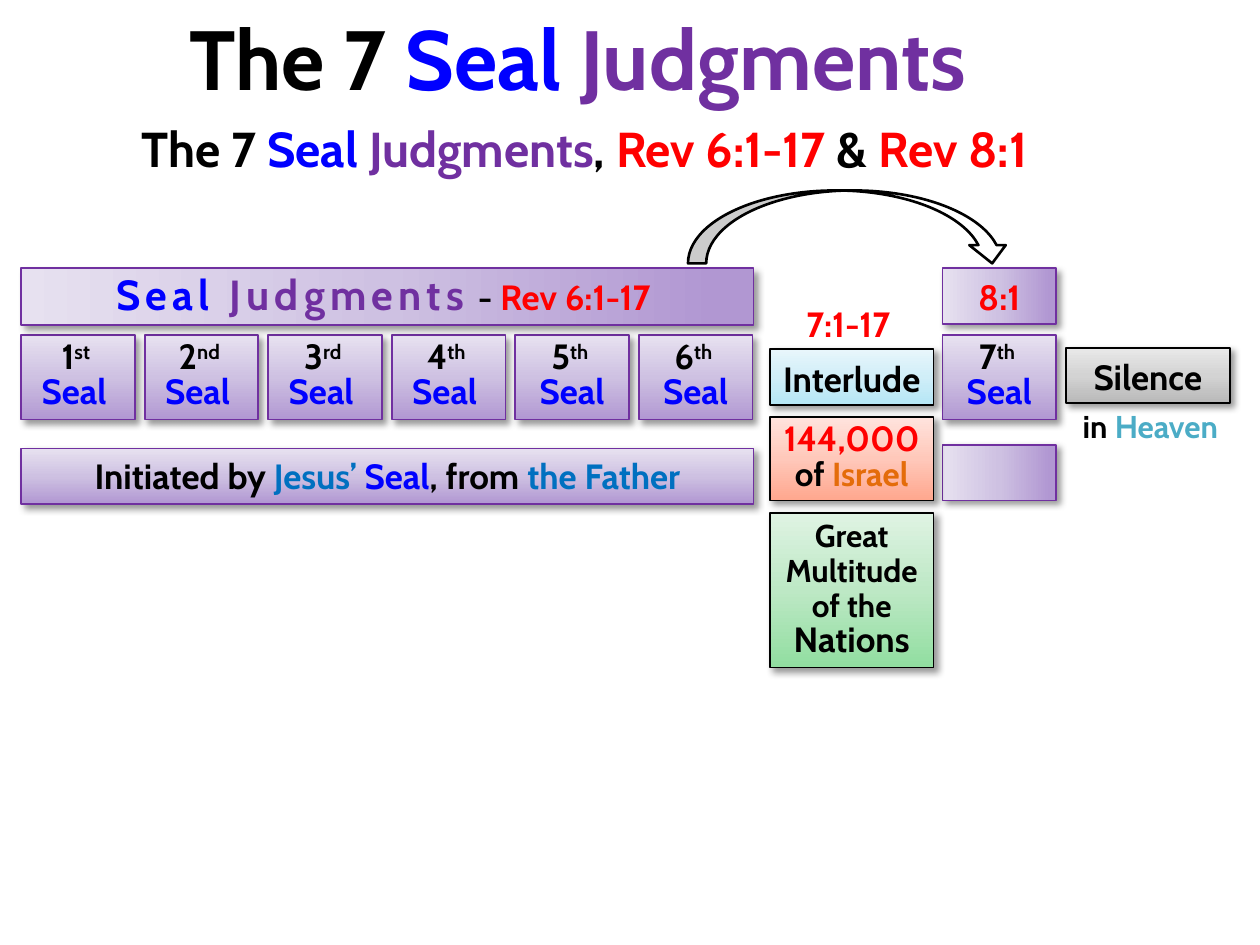
from copy import deepcopy

from lxml.etree import SubElement
from pptx import Presentation
from pptx.dml.color import RGBColor
from pptx.enum.shapes import MSO_SHAPE as Kind
from pptx.enum.text import MSO_ANCHOR as Anchor, MSO_AUTO_SIZE as Auto, PP_ALIGN as Align
from pptx.oxml.ns import qn
from pptx.util import Cm, Pt

BLACK = RGBColor(0, 0, 0)
WHITE = RGBColor(255, 255, 255)
BLUE = RGBColor(0, 0, 255)
RED = RGBColor(255, 0, 0)
PURPLE = RGBColor(0x70, 0x30, 0xA0)
AZURE = RGBColor(0x00, 0x70, 0xC0)
TEAL = RGBColor(0x4B, 0xAC, 0xC6)
ORANGE = RGBColor(0xE4, 0x6C, 0x0A)

# Gradient colours from dark to light
LILAC = (RGBColor(0xB1, 0x97, 0xD2), RGBColor(0xCE, 0xC1, 0xE2), RGBColor(0xE7, 0xE1, 0xF0))
SKY = (RGBColor(0xB5, 0xE6, 0xF5), RGBColor(0xD0, 0xEE, 0xF8), RGBColor(0xE8, 0xF6, 0xFB))
GREY = (RGBColor(0xB8, 0xB8, 0xB8), RGBColor(0xD3, 0xD3, 0xD3), RGBColor(0xE9, 0xE9, 0xE9))
CORAL = (RGBColor(0xFF, 0xA7, 0x8E), RGBColor(0xFF, 0xC8, 0xBA), RGBColor(0xFF, 0xE3, 0xDD))
GREEN = (RGBColor(0x91, 0xDE, 0xA0), RGBColor(0xBD, 0xE8, 0xC5), RGBColor(0xDF, 0xF3, 0xE3))

UP, LEFT = 90, 180  # gradient directions


def cast(props):
    """Put a soft shadow to the lower right in a properties element."""
    effects = props.find(qn("a:effectLst"))
    if effects is None:
        effects = SubElement(props, qn("a:effectLst"))
        fill = props.find(qn("a:solidFill"))
        fill.addnext(effects)
    shade = SubElement(effects, qn("a:outerShdw"), blurRad=str(Pt(4)), dist=str(Pt(3)),
                       dir="2700000", algn="tl", rotWithShape="0")
    tint = SubElement(shade, qn("a:srgbClr"), val=str(BLACK))
    SubElement(tint, qn("a:alpha"), val="40000")


class Board:
    font = {"name": "Cabin", "bold": True}
    frame = {"auto_size": Auto.NONE, "word_wrap": True}

    def __init__(self, deck):
        self.slide = deck.slides.add_slide(deck.slide_layouts[5])

    def put(self, shape, lines, size=20, lead=None, anchor=Anchor.TOP):
        """Fill a shape with lines of (text, colour, run options) tuples."""
        frame = shape.text_frame
        for key, value in {**self.frame, "vertical_anchor": anchor}.items():
            setattr(frame, key, value)
        for i, line in enumerate(lines):
            par = frame.add_paragraph() if i else frame.paragraphs[0]
            par.alignment = Align.CENTER
            if lead:
                par.line_spacing = Pt(lead)
            for text, color, *more in line:
                opts = more[0] if more else {}
                run = par.add_run()
                run.text = text
                look = {**self.font, "size": Pt(opts.get("size", size))}
                for key, value in look.items():
                    setattr(run.font, key, value)
                run.font.color.rgb = color
                for key in ("baseline", "spc"):
                    if key in opts:
                        run._r.get_or_add_rPr().set(key, str(opts[key]))

    def title(self, spot, line, size):
        shape = self.slide.shapes.title
        shape.left, shape.top, shape.width, shape.height = map(Cm, spot)
        self.put(shape, [line], size)
        shape.text_frame.word_wrap = False
        for run in shape.text_frame.paragraphs[0].runs:
            cast(run._r.get_or_add_rPr())

    def label(self, spot, line, size=20, lead=None):
        shape = self.slide.shapes.add_textbox(*map(Cm, spot))
        self.put(shape, [line], size, lead)

    def shape(self, kind, spot, edge, width):
        shape = self.slide.shapes.add_shape(kind, *map(Cm, spot))
        shape.shadow.inherit = False
        shape.line.color.rgb = edge
        shape.line.width = Pt(width)
        return shape

    def box(self, spot, tones, lines=(), edge=BLACK, angle=UP, **style):
        shape = self.shape(Kind.RECTANGLE, spot, edge, 1)
        fill = shape.fill
        fill.gradient()
        fill.gradient_angle = angle
        first = fill.gradient_stops[0]._gs
        first.addnext(deepcopy(first))
        start = 0.05 if angle == LEFT else 0
        for stop, tone, place in zip(fill.gradient_stops, tones, (start, 0.5, 1)):
            stop.color.rgb = tone
            stop.position = place
        cast(shape._element.spPr)
        self.put(shape, lines, **style)

    def arrow(self, spot):
        shape = self.shape(Kind.CURVED_DOWN_ARROW, spot, BLACK, 1.5)
        shape.fill.solid()
        shape.fill.fore_color.rgb = WHITE


def main():
    deck = Presentation()
    deck.slide_width, deck.slide_height = Cm(25.4), Cm(19.05)
    board = Board(deck)

    # Headings
    name = [("The 7 ", BLACK), ("Seal ", BLUE), ("Judgments", PURPLE)]
    board.title((3.51, 0, 16.26, 2.31), name, 48)
    verses = [(", ", BLACK), ("Rev 6:1-17 ", RED), ("&", BLACK), (" Rev 8:1 ", RED)]
    board.label((2.49, 2.26, 18.8, 1.45), name + verses, 28)

    # Seals: six in a row, the seventh after the interlude
    edge, pitch, side, bar = 0.43, 2.49, 2.29, 14.76
    last, mid, wide, low = 19, 15.52, 3.3, 1.12
    lefts = [edge + i * pitch for i in range(6)] + [last]
    ends = ["st", "nd", "rd"] + ["th"] * 4
    for num, (left, end) in enumerate(zip(lefts, ends), 1):
        seal = "Seal " if num < 5 else "Seal"
        board.box((left, 6.76, side, 1.7), LILAC,
                  [[(str(num), BLACK), (end + " ", BLACK, {"baseline": 30000})],
                   [(seal, BLUE)]], PURPLE, lead=20)

    # Bars above and below the seals
    wider = {"size": 24, "spc": 300}
    board.box((edge, 5.41, bar, 1.14), LILAC,
              [[("Seal", BLUE, wider), (" Judgments", PURPLE, wider),
                (" - ", BLACK), ("Rev 6:1-17 ", RED)]],
              PURPLE, LEFT, lead=25, anchor=Anchor.MIDDLE)
    board.box((last, 5.41, side, low), LILAC, [[("8:1", RED)]],
              PURPLE, LEFT, lead=25, anchor=Anchor.MIDDLE)
    board.box((edge, 9.04, bar, low), LILAC,
              [[("Initiated by ", BLACK), ("Jesus’ ", AZURE), ("Seal", BLUE),
                (", from ", BLACK), ("the Father", AZURE)]], PURPLE)
    board.box((last, 8.97, side, low), LILAC, edge=PURPLE, angle=LEFT)

    # Interlude column
    board.label((15.65, 5.94, 2.9, low), [("7:1-17", RED)], lead=25)
    board.box((mid, 7.04, wide, low), SKY, [[("Interlude", BLACK)]], lead=25)
    board.box((mid, 8.41, wide, 1.68), CORAL,
              [[("144,000", RED)],
               [("of ", BLACK, {"size": 19}), ("Israel", ORANGE, {"size": 19})]], lead=20)
    board.box((mid, 10.34, wide, 3.12), GREEN,
              [[("Great Multitude", BLACK)],
               [("of the ", BLACK), ("Nations", BLACK, {"size": 20})]], size=18, lead=20)

    # Silence in Heaven
    board.box((21.49, 7.01, wide, low), GREY, [[("Silence", BLACK)]], lead=25)
    board.label((21.54, 8.2, wide, 0.91), [("in ", BLACK), ("Heaven", TEAL)], 18, 18)

    board.arrow((13.87, 3.84, 6.5, 1.47))
    deck.save("out.pptx")


if __name__ == "__main__":
    main()
